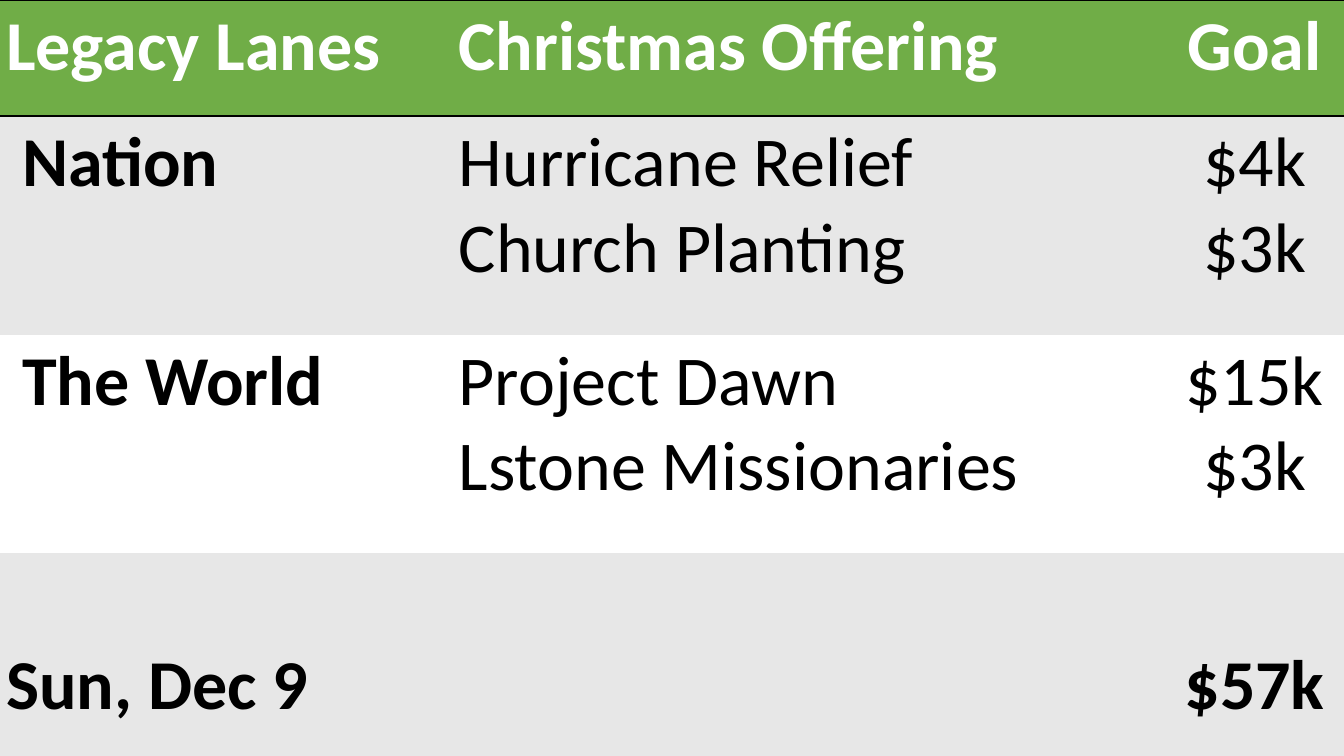
from dataclasses import dataclass

from lxml import etree
from pptx import Presentation
from pptx import util as u
from pptx.dml import color
from pptx.enum import text
from pptx.oxml import ns

COLORS = {"green": "70AD47", "gray": "E7E7E7", "white": "FFFFFF", "black": "000000"}
FONT = "Calibri"
TEXT_SIZE = u.Pt(50)
COLUMN_WIDTHS = (4.18, 7.37, 1.79)
SIDE_MARGIN, TOP_MARGIN = 0.06, 0.04
LANE_INDENT, OFFERING_INDENT = 0.22, 0.37
TOTAL_TOP_MARGIN = 0.89
PLAIN_TABLE_STYLE = "{2D5ABB26-0587-4C30-8999-92F81FD0307C}"


@dataclass(frozen=True)
class LaneRow:
    lane: str
    offerings: tuple[str, ...]
    goals: tuple[str, ...]
    height: float = 2.17
    fill: str = "gray"
    ink: str = "black"
    lane_margin: float = SIDE_MARGIN
    top_margin: float = TOP_MARGIN
    all_bold: bool = False
    borders: tuple[str, ...] = ()


LANE_ROWS = (
    LaneRow("Legacy Lanes", ("Christmas Offering",), ("Goal",), height=1.15,
            fill="green", ink="white", all_bold=True, borders=("lnT", "lnB")),
    LaneRow("Nation", ("Hurricane Relief", "Church Planting"), ("$4k", "$3k"),
            lane_margin=LANE_INDENT),
    LaneRow("The World", ("Project Dawn", "Lstone Missionaries"), ("$15k", "$3k"),
            fill="white", lane_margin=LANE_INDENT),
    LaneRow("Sun, Dec 9", (), ("$57k",), top_margin=TOTAL_TOP_MARGIN,
            all_bold=True, borders=("lnB",)),
)


def add_border(cell, side: str) -> None:
    """Draw a black two-point line on one side of a cell."""
    border = etree.SubElement(cell._tc.get_or_add_tcPr(), ns.qn(f"a:{side}"),
                              w=str(u.Pt(2)))
    ink = etree.SubElement(border, ns.qn("a:solidFill"))
    etree.SubElement(ink, ns.qn("a:srgbClr"), val=COLORS["black"])


def fill_cell(cell, row: LaneRow, lines: tuple[str, ...], left: float,
              bold: bool, align: text.PP_ALIGN) -> None:
    """Style one cell and write its lines."""
    for side in row.borders:
        add_border(cell, side)
    cell.fill.solid()
    cell.fill.fore_color.rgb = color.RGBColor.from_string(COLORS[row.fill])
    cell.margin_left = u.Inches(left)
    cell.margin_right = u.Inches(SIDE_MARGIN)
    cell.margin_top = u.Inches(row.top_margin)
    cell.margin_bottom = u.Inches(TOP_MARGIN)
    frame = cell.text_frame
    for index, line in enumerate(lines):
        paragraph = frame.add_paragraph() if index else frame.paragraphs[0]
        paragraph.alignment = align
        run = paragraph.add_run()
        run.text = line
        run.font.name = FONT
        run.font.size = TEXT_SIZE
        run.font.bold = bold
        run.font.color.rgb = color.RGBColor.from_string(COLORS[row.ink])


def add_goal_table(slide) -> None:
    """Add the table of offerings and goals."""
    frame = slide.shapes.add_table(
        len(LANE_ROWS), len(COLUMN_WIDTHS), 0, 0, u.Inches(sum(COLUMN_WIDTHS)),
        u.Inches(sum(row.height for row in LANE_ROWS)))
    goal_table = frame.table
    goal_table._tbl.tblPr.find(ns.qn("a:tableStyleId")).text = PLAIN_TABLE_STYLE
    for column, width in zip(goal_table.columns, COLUMN_WIDTHS):
        column.width = u.Inches(width)
    left, center = text.PP_ALIGN.LEFT, text.PP_ALIGN.CENTER
    for table_row, row in zip(goal_table.rows, LANE_ROWS):
        table_row.height = u.Inches(row.height)
        lane, offering, goal = table_row.cells
        fill_cell(lane, row, (row.lane,), row.lane_margin, True, left)
        fill_cell(offering, row, row.offerings, OFFERING_INDENT, row.all_bold, left)
        fill_cell(goal, row, row.goals, SIDE_MARGIN, row.all_bold, center)


def main() -> None:
    """Build the slide and save it."""
    deck = Presentation()
    deck.slide_width, deck.slide_height = u.Inches(13.33), u.Inches(7.5)
    add_goal_table(deck.slides.add_slide(deck.slide_layouts[6]))
    deck.save("out.pptx")


if __name__ == "__main__":
    main()
